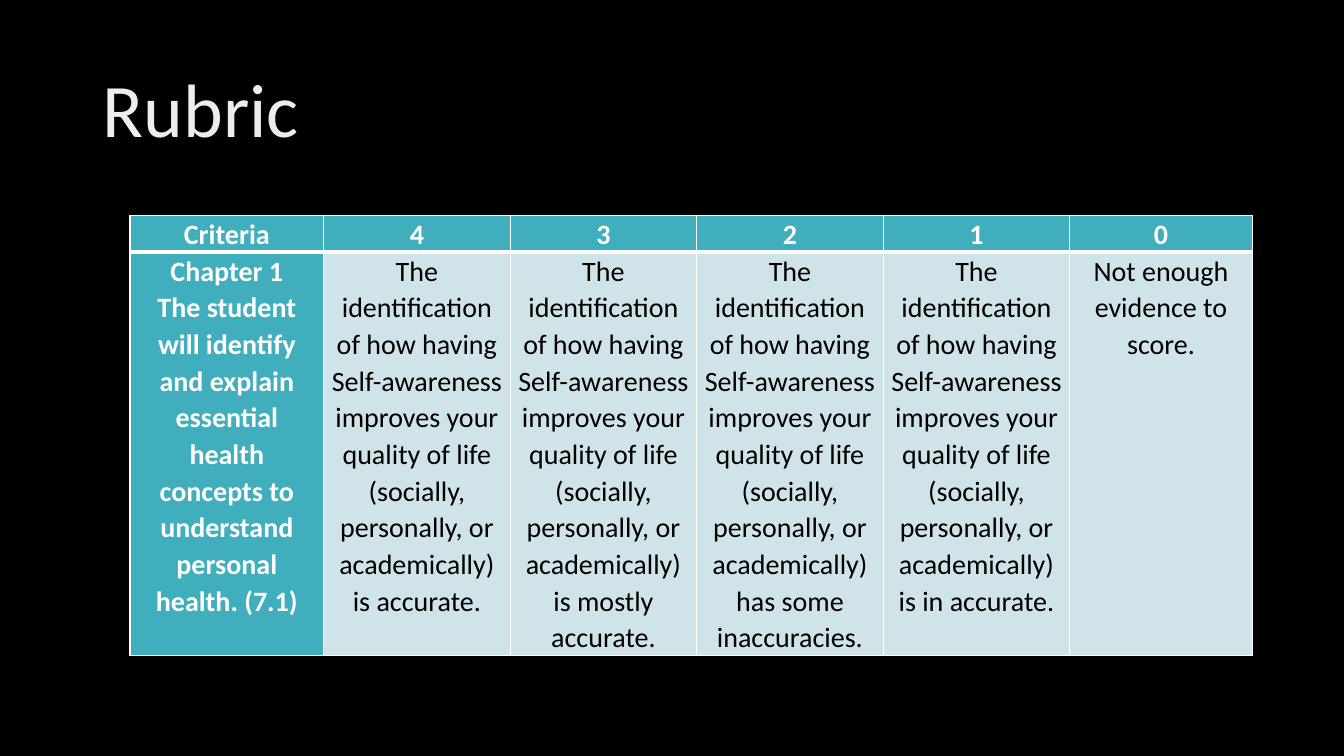
from lxml import etree
from pptx import Presentation
from pptx import util as u
from pptx.dml.color import RGBColor
from pptx.enum import text
from pptx.oxml.ns import qn

BLACK = RGBColor(0x00, 0x00, 0x00)
WHITE = RGBColor(0xFF, 0xFF, 0xFF)
SILVER = RGBColor(0xED, 0xED, 0xED)
TEAL = RGBColor(0x41, 0xAE, 0xBD)
PALE = RGBColor(0xCF, 0xE3, 0xE8)


def write(tf, content, size=20, color=BLACK, bold=False, align=text.PP_ALIGN.CENTER, spacing=1.07):
    tf.word_wrap = True
    for i, line in enumerate(content.split("\n")):
        p = tf.paragraphs[0] if i == 0 else tf.add_paragraph()
        p.alignment = align
        p.line_spacing = spacing
        r = p.add_run()
        r.text = line
        r.font.name = "Calibri"
        r.font.size = u.Pt(size)
        r.font.bold = bold
        r.font.color.rgb = color


def add_border(cell, side, width):
    ln = etree.SubElement(cell._tc.get_or_add_tcPr(), qn("a:ln" + side), w=str(u.Pt(width)))
    fill = etree.SubElement(ln, qn("a:solidFill"))
    etree.SubElement(fill, qn("a:srgbClr"), val=str(WHITE))


prs = Presentation()
prs.slide_width = u.Inches(13.33)
prs.slide_height = u.Inches(7.5)
s = prs.slides.add_slide(prs.slide_layouts[6])
s.background.fill.solid()
s.background.fill.fore_color.rgb = BLACK

title = s.shapes.add_textbox(u.Inches(0.92), u.Inches(0.4), u.Inches(11.5), u.Inches(1.45))
title.text_frame.vertical_anchor = text.MSO_ANCHOR.MIDDLE
write(title.text_frame, "Rubric", size=54, color=SILVER, align=text.PP_ALIGN.LEFT, spacing=0.9)

identification = (
    "The identification of how having Self-awareness improves your quality of life "
    "(socially, personally, or academically) "
)
outcomes = ["is accurate.", "is mostly accurate.", "has some inaccuracies.", "is in accurate."]
criterion = (
    "Chapter 1\nThe student will identify and explain essential health concepts "
    "to understand personal health. (7.1)"
)
rows = [
    ["Criteria", "4", "3", "2", "1", "0"],
    [criterion] + [identification + o for o in outcomes] + ["Not enough evidence to score."],
]
widths = [1.92] + [1.85] * 4 + [1.81]
heights = [0.36, 4.0]

rubric = s.shapes.add_table(
    len(rows), len(widths), u.Inches(1.29), u.Inches(2.14), u.Inches(sum(widths)), u.Inches(sum(heights))
).table
for col, width in zip(rubric.columns, widths):
    col.width = u.Inches(width)
for row, height in zip(rubric.rows, heights):
    row.height = u.Inches(height)

for i, row in enumerate(rows):
    for j, content in enumerate(row):
        cell = rubric.cell(i, j)
        heading = i == 0 or j == 0
        cell.margin_left = cell.margin_right = u.Inches(0.07)
        cell.margin_top = cell.margin_bottom = 0
        for side in "LRTB":
            under_header = (i, side) in [(0, "B"), (1, "T")]
            add_border(cell, side, 3 if under_header else 1)
        cell.fill.solid()
        cell.fill.fore_color.rgb = TEAL if heading else PALE
        write(cell.text_frame, content, color=WHITE if heading else BLACK, bold=heading)

prs.save("out.pptx")
